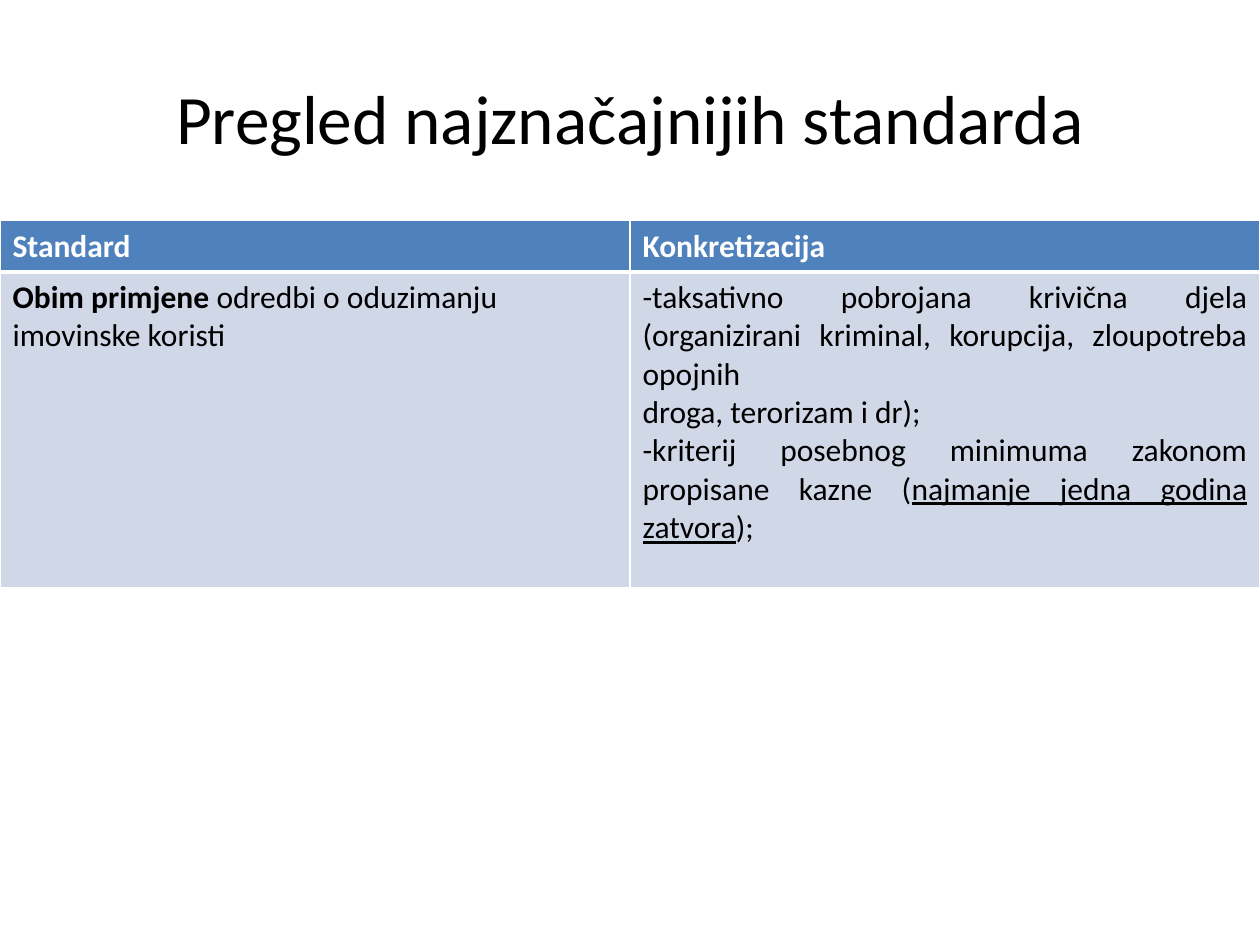
from lxml import etree
from pptx import Presentation
from pptx import util as u
from pptx.dml.color import RGBColor
from pptx.enum import text
from pptx.oxml import ns

BLACK = RGBColor(0x00, 0x00, 0x00)
WHITE = RGBColor(0xFF, 0xFF, 0xFF)
HEADER_BLUE = RGBColor(0x4F, 0x81, 0xBD)
PALE_BLUE = RGBColor(0xD0, 0xD8, 0xE8)

LEFT, JUSTIFY = text.PP_ALIGN.LEFT, text.PP_ALIGN.JUSTIFY
THIN, THICK = 1, 3

# Each paragraph is a list of (wording, emphasis) runs.
HEADINGS = ["Standard", "Konkretizacija"]
SCOPE = [
    [("Obim primjene ", "bold"), ("odredbi o oduzimanju imovinske koristi", "")],
]
CRITERIA = [
    [("-taksativno pobrojana krivična djela (organizirani kriminal, "
      "korupcija, zloupotreba opojnih ", "")],
    [("droga, terorizam i dr);", "")],
    [("-kriterij posebnog minimuma zakonom propisane kazne (", ""),
     ("najmanje jedna godina zatvora", "underline"),
     (");", "")],
]


class StandardsSlide:
    font_name = "Calibri"
    title_size = u.Pt(39.6)
    table_size = u.Pt(18)

    def __init__(self, deck):
        self.slide = deck.slides.add_slide(deck.slide_layouts[5])

    def run(self, paragraph, wording, size, color, emphasis=""):
        run = paragraph.add_run()
        run.text = wording
        run.font.name = self.font_name
        run.font.size = size
        run.font.color.rgb = color
        run.font.bold = emphasis == "bold"
        run.font.underline = emphasis == "underline"

    def title(self, wording):
        heading = self.slide.shapes.title
        heading.left, heading.top = u.Cm(1.27), u.Cm(0.76)
        heading.width, heading.height = u.Cm(22.86), u.Cm(3.18)
        frame = heading.text_frame
        frame.vertical_anchor = text.MSO_ANCHOR.MIDDLE
        frame.paragraphs[0].alignment = text.PP_ALIGN.CENTER
        self.run(frame.paragraphs[0], wording, self.title_size, BLACK)

    def table(self, top, column_width, row_heights):
        table = self.slide.shapes.add_table(
            len(row_heights), len(HEADINGS), 0, top,
            column_width * len(HEADINGS), sum(row_heights)).table
        for column in table.columns:
            column.width = column_width
        for row, height in zip(table.rows, row_heights):
            row.height = height
        return table

    def cell(self, cell, paragraphs, fill, color, alignment=LEFT, top=THIN, bottom=THIN):
        self.borders(cell, {"L": THIN, "R": THIN, "T": top, "B": bottom})
        cell.fill.solid()
        cell.fill.fore_color.rgb = fill
        frame = cell.text_frame
        for index, runs in enumerate(paragraphs):
            paragraph = frame.add_paragraph() if index else frame.paragraphs[0]
            paragraph.alignment = alignment
            for wording, emphasis in runs:
                self.run(paragraph, wording, self.table_size, color, emphasis)

    def borders(self, cell, widths):
        """Draw white cell edges; must precede the fill in the cell properties."""
        properties = cell._tc.get_or_add_tcPr()
        for side, points in widths.items():
            line = etree.SubElement(properties, ns.qn(f"a:ln{side}"), w=str(u.Pt(points)))
            solid = etree.SubElement(line, ns.qn("a:solidFill"))
            etree.SubElement(solid, ns.qn("a:srgbClr"), val=str(WHITE))


def main():
    deck = Presentation()
    deck.slide_width, deck.slide_height = u.Cm(25.4), u.Cm(19.05)

    page = StandardsSlide(deck)
    page.title("Pregled najznačajnijih standarda")

    standards = page.table(u.Cm(4.45), u.Cm(12.7), [u.Cm(1.03), u.Cm(6.36)])
    for column, heading in enumerate(HEADINGS):
        page.cell(standards.cell(0, column), [[(heading, "bold")]],
                  HEADER_BLUE, WHITE, bottom=THICK)
    for column, (paragraphs, alignment) in enumerate([(SCOPE, LEFT), (CRITERIA, JUSTIFY)]):
        page.cell(standards.cell(1, column), paragraphs,
                  PALE_BLUE, BLACK, alignment, top=THICK)

    deck.save("out.pptx")


if __name__ == "__main__":
    main()
